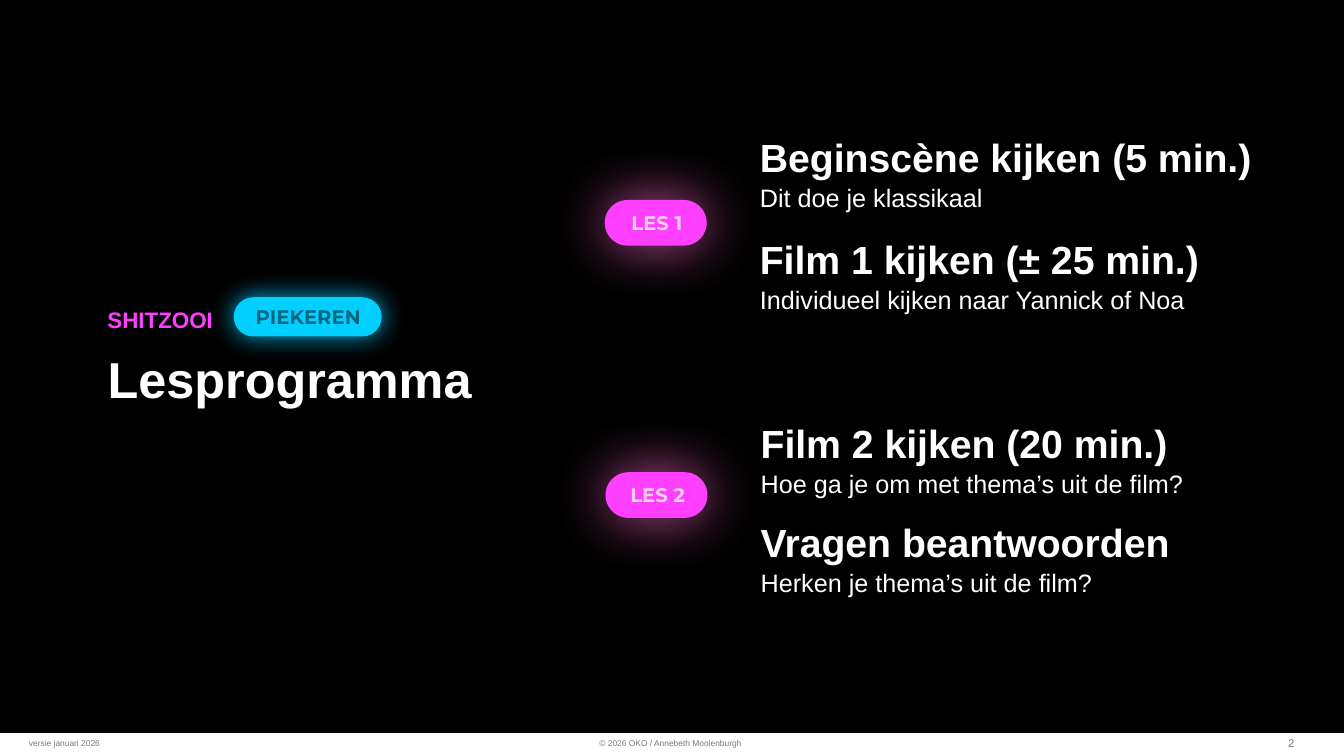
from lxml import etree
from pptx import Presentation
from pptx.dml.color import RGBColor
from pptx.enum.shapes import MSO_SHAPE as Shape
from pptx.enum.text import MSO_ANCHOR as Anchor, MSO_AUTO_SIZE as AutoSize, PP_ALIGN as Align
from pptx.oxml.ns import qn
from pptx.util import Cm, Pt

BLACK, WHITE, GREY = "000000", "FFFFFF", "797979"
PINK, PALE_PINK, PINK_GLOW = "FF3FFF", "F2CFEE", "C8539F"
CYAN, DARK_CYAN = "00CFFF", "00677F"
SUBTITLE_DROP = 1.24

# Per lesson: label, pill left and top, text left, parts
# Per part: top, heading, heading width, explanation, explanation width
LESSONS = [
    ("LES 1", 15.24, 5.04, 18.9, [
        (3.23, "Beginscène kijken (5 min.)", 13.28, "Dit doe je klassikaal", 14.22),
        (5.81, "Film 1 kijken (± 25 min.)", 13.0,
         "Individueel kijken naar Yannick of Noa", 14.22),
    ]),
    ("LES 2", 15.26, 11.9, 18.92, [
        (10.44, "Film 2 kijken (20 min.)", 11.66,
         "Hoe ga je om met thema’s uit de film?", 11.66),
        (12.93, "Vragen beantwoorden", 11.66, "Herken je thema’s uit de film?", 11.66),
    ]),
]


def color(hex_string):
    return RGBColor.from_string(hex_string)


def write(shape, text, size, hex_color, font="Arial", bold=False,
          align=Align.LEFT, anchor=Anchor.TOP):
    frame = shape.text_frame
    frame.word_wrap = True
    frame.auto_size = AutoSize.NONE
    frame.vertical_anchor = anchor
    paragraph = frame.paragraphs[0]
    paragraph.alignment = align
    run = paragraph.add_run()
    run.text = text
    run.font.name = font
    run.font.size = Pt(size)
    run.font.bold = bold
    run.font.color.rgb = color(hex_color)


def add_text(slide, left, top, width, height, *text, grow=False, **style):
    box = slide.shapes.add_textbox(Cm(left), Cm(top), Cm(width), Cm(height))
    write(box, *text, **style)
    if grow:
        box.text_frame.auto_size = AutoSize.SHAPE_TO_FIT_TEXT


def add_block(slide, kind, left, top, width, height, fill):
    shape = slide.shapes.add_shape(kind, Cm(left), Cm(top), Cm(width), Cm(height))
    shape.shadow.inherit = False
    shape.fill.solid()
    shape.fill.fore_color.rgb = color(fill)
    shape.line.fill.background()
    return shape


def add_glow(shape, hex_color, opacity, blur):
    effects = shape.element.spPr.find(qn("a:effectLst"))
    shadow = etree.SubElement(effects, qn("a:outerShdw"), blurRad=str(Pt(blur)),
                              dist="0", dir="0", algn="ctr", rotWithShape="0")
    tint = etree.SubElement(shadow, qn("a:srgbClr"), val=hex_color)
    etree.SubElement(tint, qn("a:alpha"), val=str(opacity * 1000))


def add_pill(slide, left, top, width, height, fill, glow):
    pill = add_block(slide, Shape.ROUNDED_RECTANGLE, left, top, width, height, fill)
    pill.adjustments[0] = 0.5
    add_glow(pill, *glow)


def add_label(slide, left, top, width, text, hex_color):
    add_text(slide, left, top, width, 0.93, text, 14, hex_color,
             font="Montserrat", bold=True, align=Align.CENTER)


def add_lesson(slide, label, pill_left, pill_top, text_left, parts):
    add_pill(slide, pill_left, pill_top, 2.57, 1.15, PINK, (PINK_GLOW, 100, 42.4))
    add_label(slide, pill_left - 0.74, pill_top + 0.14, 4.11, label, PALE_PINK)
    for top, heading, heading_width, explanation, explanation_width in parts:
        add_text(slide, text_left, top, heading_width, 1.45, heading, 28, WHITE,
                 bold=True, grow=True)
        add_text(slide, text_left, top + SUBTITLE_DROP, explanation_width, 1.03,
                 explanation, 18, WHITE, grow=True)


def add_title(slide, text):
    title = slide.shapes.title
    title.left, title.top, title.width, title.height = Cm(2.46), Cm(8.64), Cm(18.9), Cm(1.73)
    write(title, text, 36, WHITE, bold=True)


def main():
    presentation = Presentation()
    presentation.slide_width, presentation.slide_height = Cm(33.87), Cm(19.05)
    slide = presentation.slides.add_slide(presentation.slide_layouts[5])

    # Black panel behind the title
    panel = add_block(slide, Shape.RECTANGLE, 0, -0.05, 33.87, 18.52, BLACK)
    slide.shapes.title.element.addprevious(panel.element)

    # Title with series name and theme
    add_title(slide, "Lesprogramma")
    add_text(slide, 2.46, 7.59, 18.9, 1.09, "SHITZOOI", 16, PINK, bold=True)
    add_pill(slide, 5.89, 7.49, 3.73, 0.99, CYAN, (CYAN, 88, 18.8))
    add_label(slide, 5.79, 7.57, 3.96, "PIEKEREN", DARK_CYAN)

    # Lessons
    for lesson in LESSONS:
        add_lesson(slide, *lesson)

    # Footer
    for left, width, text, size, align in [
        (0.48, 8.74, "versie januari 2026", 6, Align.LEFT),
        (9.86, 14.07, "© 2026 OKO / Annebeth Moolenburgh", 6, Align.CENTER),
        (25.25, 7.62, "2", 8, Align.RIGHT),
    ]:
        add_text(slide, left, 18.22, width, 1.02, text, size, GREY,
                 align=align, anchor=Anchor.MIDDLE)

    presentation.save("out.pptx")


if __name__ == "__main__":
    main()
